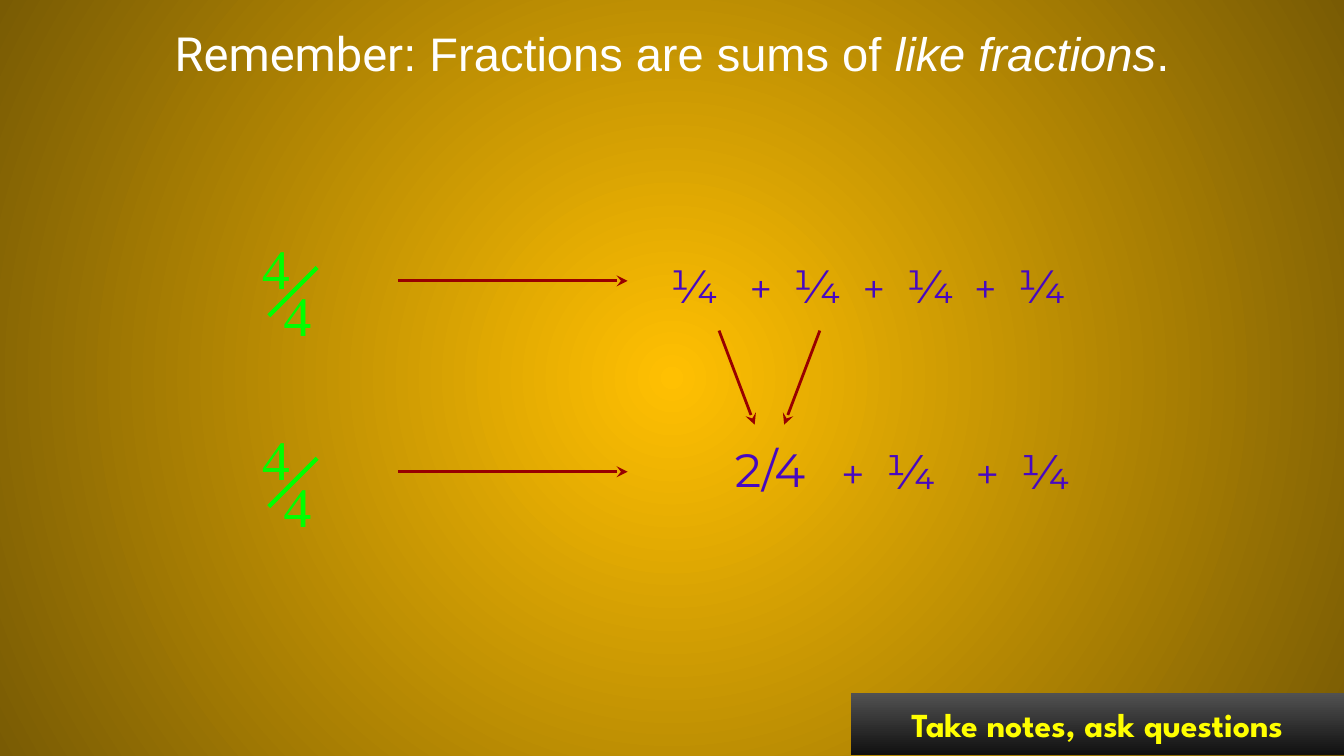
from lxml.etree import SubElement
from pptx import Presentation
from pptx.dml.color import RGBColor
from pptx.enum.shapes import MSO_CONNECTOR as CONN, MSO_SHAPE as SHAPE
from pptx.enum.text import MSO_ANCHOR as ANCHOR, PP_ALIGN as ALIGN
from pptx.oxml.ns import qn
from pptx.util import Inches, Pt

GOLD = RGBColor(0xFF, 0xC0, 0x02)
BROWN = RGBColor(0x79, 0x5B, 0x04)
GREY = RGBColor(0x51, 0x51, 0x51)
BLACK = RGBColor(0x10, 0x10, 0x10)
YELLOW = RGBColor(0xFF, 0xFF, 0x00)
WHITE = RGBColor(0xFF, 0xFF, 0xFF)
PURPLE = RGBColor(0x47, 0x08, 0xC1)
RED = RGBColor(0x98, 0x00, 0x00)
GREEN = RGBColor(0x00, 0xFF, 0x00)


def set_gradient(fill, *colors):
    fill.gradient()
    for stop, color in zip(fill.gradient_stops, colors):
        stop.color.rgb = color


def write(sp, runs, align=ALIGN.LEFT, anchor=ANCHOR.TOP):
    tf = sp.text_frame
    tf.word_wrap = True
    tf.vertical_anchor = anchor
    for side in ("left", "top", "right", "bottom"):
        setattr(tf, f"margin_{side}", Inches(0.1))
    p = tf.paragraphs[0]
    p.alignment = align
    for text, font, size, color, style in runs:
        r = p.add_run()
        r.text = text
        r.font.color.rgb = color
        for name, value in {"name": font, "size": Pt(size), **style}.items():
            setattr(r.font, name, value)
    return p


def add_text(s, box, runs, **layout):
    sp = s.shapes.add_textbox(*map(Inches, box))
    return write(sp, runs, **layout)


def add_line(s, start, end, color, width, arrow=False):
    line = s.shapes.add_connector(CONN.STRAIGHT, *map(Inches, (*start, *end)))
    line.line.color.rgb = color
    line.line.width = Pt(width)
    if arrow:
        ln = line._element.spPr.find(qn("a:ln"))
        SubElement(ln, qn("a:headEnd"), type="stealth")
    SubElement(line._element.spPr, qn("a:effectLst"))


def add_background(s):
    fill = s.background.fill
    set_gradient(fill, GOLD, BROWN)
    grad = s._element.find(".//" + qn("a:gradFill"))
    grad.remove(grad.find(qn("a:lin")))
    center = SubElement(grad, qn("a:path"), {"path": "circle"})
    SubElement(center, qn("a:fillToRect"), {side: "50000" for side in "ltrb"})


def add_title(s, box):
    add_text(s, box, [
        ("Remember", "Roboto", 25.2, WHITE, {}),
        (": Fractions are sums of ", "Arial", 25.2, WHITE, {}),
        ("like fractions", "Arial", 25.2, WHITE, {"italic": True}),
        (".", "Arial", 25.2, WHITE, {}),
    ], align=ALIGN.CENTER, anchor=ANCHOR.MIDDLE)


def add_footer(s, box):
    sp = s.shapes.add_shape(SHAPE.RECTANGLE, *map(Inches, box))
    sp.shadow.inherit = False
    set_gradient(sp.fill, GREY, BLACK)
    sp.fill.gradient_angle = 270
    sp.line.fill.background()
    write(sp, [("Take notes, ask questions", "League Spartan", 18, YELLOW, {"bold": True})],
          align=ALIGN.CENTER, anchor=ANCHOR.MIDDLE)


def add_whole(s, x, y):
    for dx, dy in ((0, 0), (0.16, 0.35)):
        add_text(s, (x + dx, y + dy, 0.41, 0.71), [("4", "Times New Roman", 30, GREEN, {})])
    add_line(s, (x + 0.15, y + 0.71), (x + 0.51, y + 0.35), GREEN, 2.25)
    add_line(s, (x + 2.82, y + 0.45), (x + 1.11, y + 0.45), RED, 1.5, arrow=True)


def add_first_term(s, box, text, align):
    add_text(s, box, [(text, "Montserrat", 25, PURPLE, {})], align=align)


def add_quarters(s, lefts, y, size, tab):
    for x in lefts:
        p = add_text(s, (x, y, 0.99, 0.62), [
            ("+\t", "Montserrat", size - 4, PURPLE, {}),
            ("¼", "Montserrat", size, PURPLE, {}),
        ])
        tabs = SubElement(p._p.get_or_add_pPr(), qn("a:tabLst"))
        SubElement(tabs, qn("a:tab"), pos=str(Inches(tab)), algn="l")


def add_merge_arrows(s, x, y, w, h):
    center = x + w / 2
    for side in (-1, 1):
        add_line(s, (center + side * 0.11, y + h), (center + side * w / 2, y),
                 RED, 1.5, arrow=True)


def main():
    prs = Presentation()
    prs.slide_width, prs.slide_height = Inches(10), Inches(10 * 9 / 16)
    s = prs.slides.add_slide(prs.slide_layouts[6])
    add_background(s)
    add_footer(s, (6.33, 5.16, 3.67, 0.46))
    add_title(s, (0.34, 0.08, 9.32, 0.63))
    for y in (1.64, 3.06):
        add_whole(s, 1.85, y)
    add_first_term(s, (4.75, 1.81, 0.82, 0.62), "¼", ALIGN.CENTER)
    add_quarters(s, (5.48, 6.32, 7.15), 1.81, 25, 0.32)
    add_merge_arrows(s, 5.35, 2.46, 0.75, 0.7)
    add_first_term(s, (5.37, 3.18, 0.92, 0.62), "2/4", ALIGN.LEFT)
    add_quarters(s, (6.16, 7.16), 3.18, 26, 0.33)
    prs.save("out.pptx")


if __name__ == "__main__":
    main()
